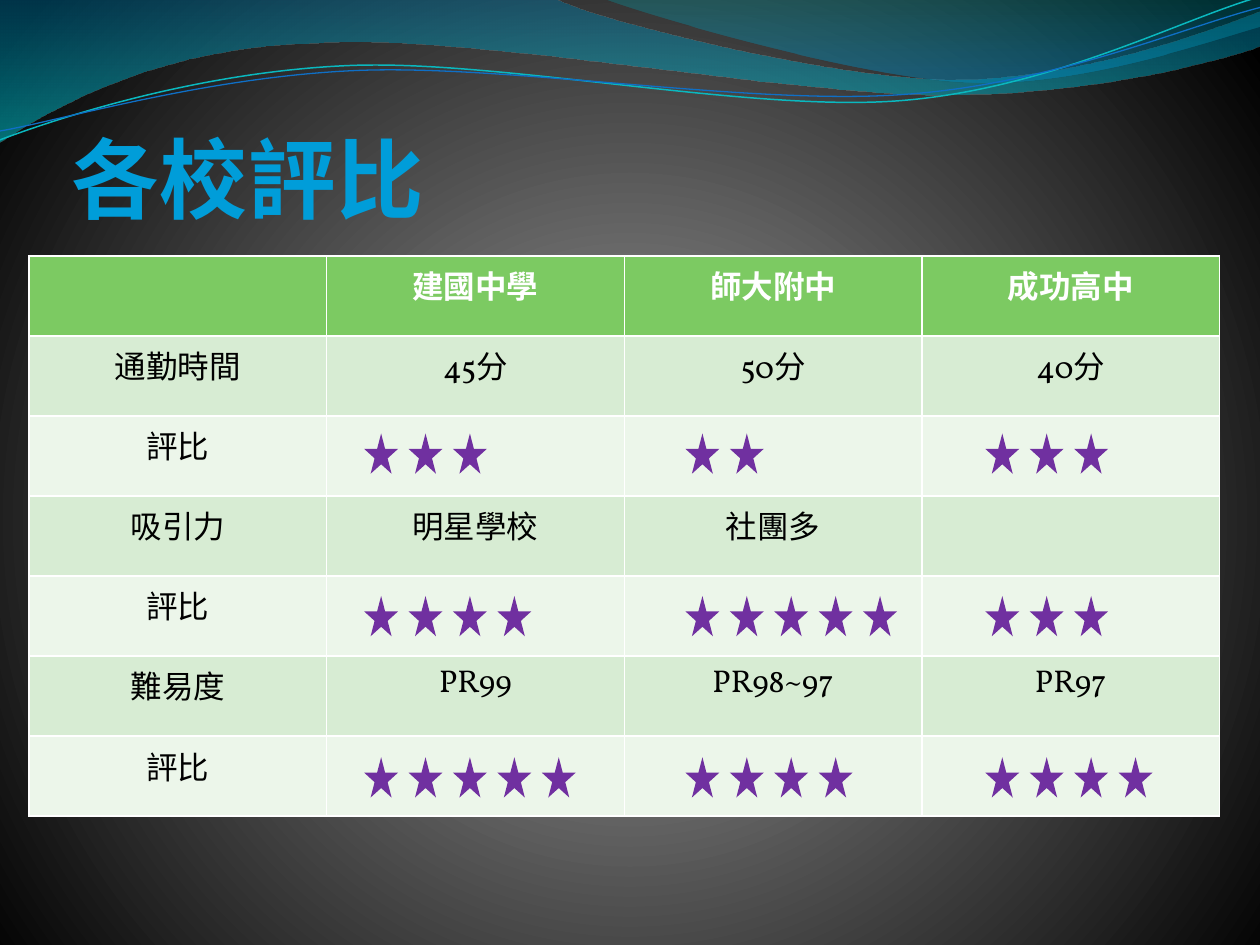
from math import cos, radians, sin
from lxml import etree
from pptx import Presentation
from pptx.dml.color import RGBColor
from pptx.enum.shapes import MSO_SHAPE
from pptx.enum.text import MSO_AUTO_SIZE, PP_ALIGN
from pptx.oxml.ns import qn
from pptx.util import Inches, Pt

WHITE = RGBColor(0xFF, 0xFF, 0xFF)
BLACK = RGBColor(0x00, 0x00, 0x00)
GREEN = RGBColor(0x7C, 0xCA, 0x62)
GREEN_MID = RGBColor(0xD7, 0xEC, 0xD3)
GREEN_PALE = RGBColor(0xEC, 0xF6, 0xEA)
PURPLE = RGBColor(0x70, 0x30, 0xA0)
TEAL = RGBColor(0x0A, 0xB8, 0xBF)
BLUE = RGBColor(0x0F, 0x6F, 0xC6)
BLUE_BRIGHT = RGBColor(0x00, 0x9D, 0xD9)
BLUE_DARK = RGBColor(0x00, 0x6F, 0x99)
GRAY = RGBColor(0x7F, 0x7F, 0x7F)
GRAY_DARK = RGBColor(0x76, 0x76, 0x76)
WAVE_BLUE = RGBColor(0x00, 0x74, 0xA1)
WAVE_TEAL = RGBColor(0x00, 0xC6, 0xCF)
CREST_TEAL = RGBColor(0x00, 0xA1, 0xA9)
CREST_BLUE = RGBColor(0x00, 0x8B, 0xBF)


def set_gradient(fill, element, stops, circle=False):
    """Fill with (percent, colour, opacity) stops, downwards or in a circle."""
    fill.gradient()
    gradient = next(element.iter(qn("a:gradFill")))
    for child in list(gradient):
        gradient.remove(child)
    stop_list = etree.SubElement(gradient, qn("a:gsLst"))
    for position, color, opacity in stops:
        stop = etree.SubElement(stop_list, qn("a:gs"), pos=str(position * 1000))
        rgb = etree.SubElement(stop, qn("a:srgbClr"), val=str(color))
        if opacity < 100:
            etree.SubElement(rgb, qn("a:alpha"), val=str(opacity * 1000))
    if circle:
        shade = etree.SubElement(gradient, qn("a:path"), path="circle")
        etree.SubElement(shade, qn("a:fillToRect"),
                         l="10000", t="110000", r="10000", b="100000")
    else:
        etree.SubElement(gradient, qn("a:lin"), ang="5400000", scaled="1")


def add_curve(shapes, start, segments, close):
    """Draw lines (one point) and Bezier curves (three points) as a freeform."""
    builder = shapes.build_freeform(Inches(start[0]), Inches(start[1]))
    builder.add_line_segments(
        [(Inches(x), Inches(y)) for segment in segments for x, y in segment], close=close)
    shape = builder.convert_to_shape()
    shape.shadow.inherit = False
    # Join each three control points into one curve
    lines = iter(list(shape.element.iter(qn("a:lnTo"))))
    for segment in segments:
        parts = [next(lines) for _ in segment]
        if len(parts) == 3:
            curve = etree.Element(qn("a:cubicBezTo"))
            parts[0].addprevious(curve)
            for part in parts:
                curve.append(part[0])
                part.getparent().remove(part)
    return shape


presentation = Presentation()
presentation.slide_width = Inches(10)
presentation.slide_height = Inches(7.5)
slide = presentation.slides.add_slide(presentation.slide_layouts[6])
shapes = slide.shapes

# Background
set_gradient(slide.background.fill, slide.element,
             [(0, GRAY, 100), (25, GRAY_DARK, 100), (100, BLACK, 100)], circle=True)

# Filled waves along the top
waves = [
    ((0, 0), [
        [(4.4, -0.01)],
        [(4.76, 0.17), (6.64, 0.63), (7.58, 0.63)],
        [(8.53, 0.63), (9.58, 0.26), (10, 0.09)],
        [(10.01, 0.36)],
        [(9.83, 0.44), (8.7, 0.76), (7.46, 0.75)],
        [(6.22, 0.75), (3.82, 0.28), (2.57, 0.34)],
        [(1.29, 0.36), (0.46, 0.83), (-0.01, 1.13)],
        [(0, 0)],
    ], [(0, WAVE_BLUE, 45), (100, WAVE_TEAL, 55)]),
    ((4.79, -0.01), [
        [(5.09, 0.11), (6.82, 0.62), (7.69, 0.65)],
        [(8.56, 0.69), (9.61, 0.32), (10, 0.21)],
        [(10, 0)],
        [(4.79, -0.01)],
    ], [(0, CREST_TEAL, 30), (80, CREST_BLUE, 45)]),
]
for start, segments, stops in waves:
    wave = add_curve(shapes, start, segments, close=True)
    set_gradient(wave.fill, wave.element, stops)
    wave.line.fill.background()

# Thin wave lines, drawn level and then tilted about their centre
TILT = 2.7
wave_lines = [
    ([[(0, 1.11)],
      [(0.48, 0.93), (1.58, 0.57), (2.77, 0.52)],
      [(3.95, 0.47), (5.93, 0.89), (7.13, 0.8)],
      [(8.33, 0.71), (9.38, 0.15), (9.98, -0.02)]], (4.99, 0.58), TEAL, 0.85),
    ([[(0, 1.04)],
      [(0.47, 0.96), (1.64, 0.61), (2.83, 0.56)],
      [(4.03, 0.51), (5.97, 0.84), (7.17, 0.75)],
      [(8.36, 0.67), (9.41, 0.21), (10, 0.06)]], (5, 0.59), BLUE, 0.75),
]
line_group = shapes.add_group_shape()
cosine, sine = cos(radians(TILT)), sin(radians(TILT))
for segments, (center_x, center_y), color, width in wave_lines:
    level = [[(center_x + (x - center_x) * cosine - (y - center_y) * sine,
               center_y + (x - center_x) * sine + (y - center_y) * cosine)
              for x, y in segment] for segment in segments]
    wave_line = add_curve(line_group.shapes, level[0][0], level[1:], close=False)
    wave_line.rotation = 360 - TILT
    wave_line.fill.background()
    wave_line.line.color.rgb = color
    wave_line.line.width = Pt(width)

# Comparison table, with the borders of its default style
rows = [
    ["", "建國中學", "師大附中", "成功高中"],
    ["通勤時間", "45分", "50分", "40分"],
    ["評比", "", "", ""],
    ["吸引力", "明星學校", "社團多", ""],
    ["評比", "", "", ""],
    ["難易度", "PR99", "PR98~97", "PR97"],
    ["評比", "", "", ""],
]
arial_texts = {"明星學校", "社團多", *rows[0]}
table = shapes.add_table(len(rows), 4, Inches(0.23), Inches(2.03),
                         Inches(9.45), Inches(4.45)).table
for row_index, texts in enumerate(rows):
    is_header = row_index == 0
    for column_index, text in enumerate(texts):
        cell = table.cell(row_index, column_index)
        cell.fill.solid()
        cell.fill.fore_color.rgb = (
            GREEN if is_header else GREEN_MID if row_index % 2 else GREEN_PALE)
        if not text:
            continue
        cell.text = text
        paragraph = cell.text_frame.paragraphs[0]
        paragraph.alignment = PP_ALIGN.CENTER
        paragraph.font.size = Pt(18)
        paragraph.font.name = "Arial" if text in arial_texts else "Vollkorn"
        paragraph.font.bold = is_header
        paragraph.font.color.rgb = WHITE if is_header else BLACK

# Star ratings: one row per criterion, one column per school
ratings = [(3.44, (3, 2, 3)), (4.73, (4, 5, 3)), (6.01, (5, 4, 4))]
star_group = shapes.add_group_shape()
for top, counts in ratings:
    for left, count in zip((2.89, 5.44, 7.82), counts):
        for star_index in range(count):
            star = star_group.shapes.add_shape(
                MSO_SHAPE.STAR_5_POINT,
                Inches(left + 1.41 / 4 * star_index), Inches(top),
                Inches(0.27), Inches(0.32))
            star.shadow.inherit = False
            star.fill.solid()
            star.fill.fore_color.rgb = PURPLE
            star.line.fill.background()

# Title
title = shapes.add_textbox(Inches(0.47), Inches(0.94), Inches(3.03), Inches(0.94))
title.text_frame.word_wrap = False
title.text_frame.auto_size = MSO_AUTO_SIZE.SHAPE_TO_FIT_TEXT
run = title.text_frame.paragraphs[0].add_run()
run.text = "各校評比"
run.font.size = Pt(50)
run.font.name = "Vollkorn"
run.font.bold = True
run.font._element.set("spc", "50")
set_gradient(run.font.fill, run.font._element,
             [(25, BLUE_BRIGHT, 100), (100, BLUE_DARK, 100)])

presentation.save("out.pptx")
